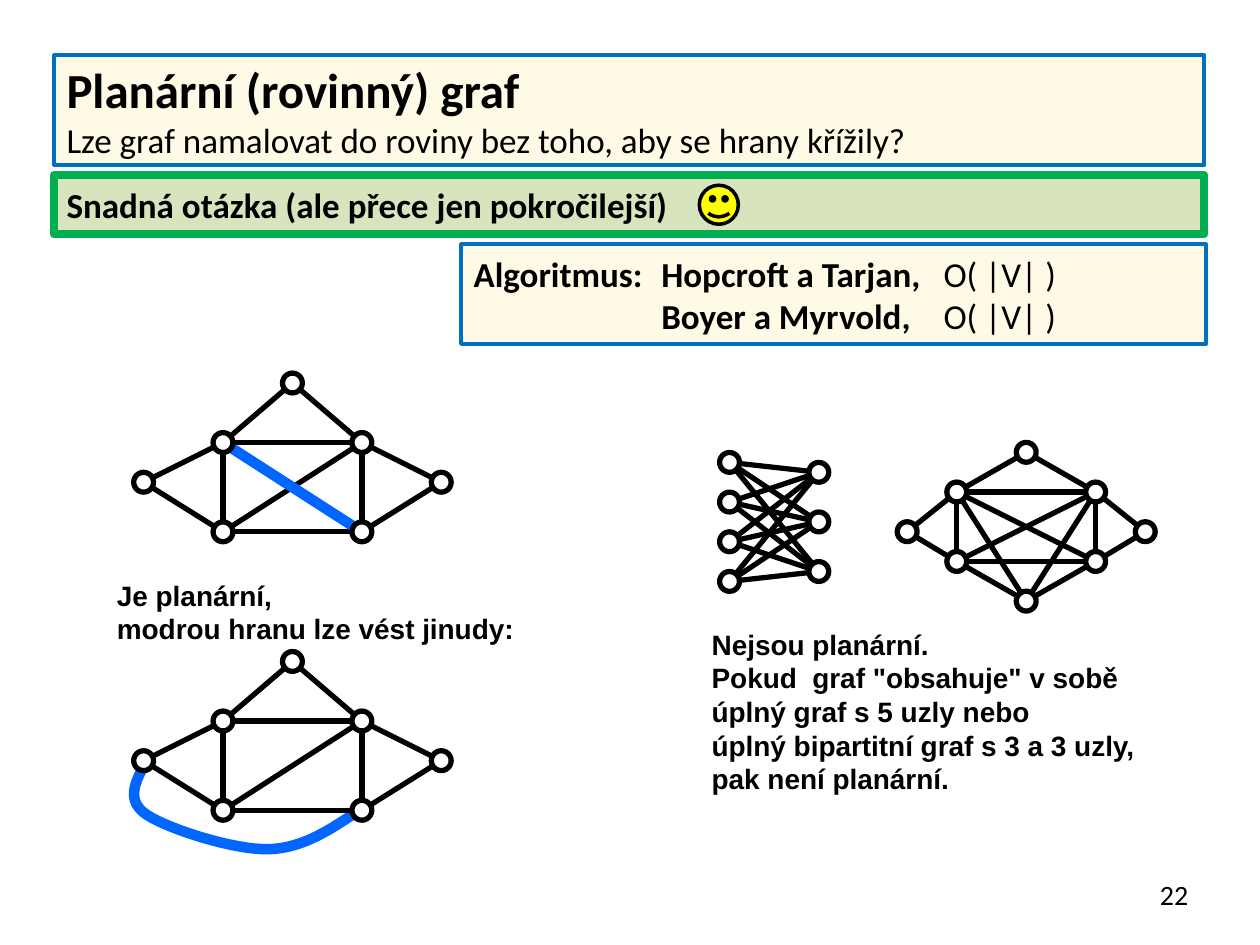
"""Build the slide on planar graphs."""
from itertools import product
from lxml import etree
from pptx import Presentation
from pptx.dml.color import RGBColor
from pptx.enum.shapes import MSO_CONNECTOR, MSO_SHAPE
from pptx.enum.text import MSO_ANCHOR, MSO_AUTO_SIZE, PP_ALIGN
from pptx.oxml.ns import qn
from pptx.util import Inches, Pt

RECT, OVAL, SMILE = MSO_SHAPE.RECTANGLE, MSO_SHAPE.OVAL, MSO_SHAPE.SMILEY_FACE
LINE = MSO_CONNECTOR.STRAIGHT
LEFT, RIGHT = PP_ALIGN.LEFT, PP_ALIGN.RIGHT
TOP, MID = MSO_ANCHOR.TOP, MSO_ANCHOR.MIDDLE
GROW, FIXED = MSO_AUTO_SIZE.SHAPE_TO_FIT_TEXT, MSO_AUTO_SIZE.NONE
BLACK, WHITE, BLUE = "000000", "FFFFFF", "0066FF"
CREAM, EDGE = "FFFAE5", "0070C0"

deck = Presentation()
deck.slide_width, deck.slide_height = Inches(10), Inches(7.5)
slide = deck.slides.add_slide(deck.slide_layouts[6])
shapes = slide.shapes
col, row = deck.slide_width / 10, deck.slide_height / 7.5
unit = col / 12.7


def ink(part, hue):
    part.solid()
    part.fore_color.rgb = RGBColor.from_string(hue)


def write(shape, lines, face="Calibri", align=LEFT, anchor=MID, fit=FIXED, tabs=()):
    frame = shape.text_frame
    frame.word_wrap, frame.vertical_anchor, frame.auto_size = True, anchor, fit
    for num, runs in enumerate(lines):
        para = frame.add_paragraph() if num else frame.paragraphs[0]
        para.alignment = align
        if tabs:
            stops = etree.SubElement(para._p.get_or_add_pPr(), qn("a:tabLst"))
            for stop in tabs:
                etree.SubElement(stops, qn("a:tab"), pos=str(int(stop * col)), algn="l")
        for words, size, bold in runs:
            run = para.add_run()
            run.text = words
            run.font.name, run.font.size, run.font.bold = face, Pt(size), bold
            ink(run.font.fill, BLACK)


graphs = [
    (1.14, 3.04,
     dict(A=(15, 0), B=(8, 6), C=(22, 6), D=(0, 10), E=(30, 10), F=(8, 15), G=(22, 15)),
     "AB AC BD CE BF CG DF EG BC FG CF".split(), ["BG"]),
    (5.79, 3.67,
     dict(A=(0, 0), B=(0, 4), C=(0, 8), D=(0, 12), X=(9, 1), Y=(9, 6), Z=(9, 11)),
     list(product("ABCD", "XYZ")), []),
    (7.2, 3.59,
     dict(A=(12, 0), B=(5, 4), C=(19, 4), D=(0, 8), E=(24, 8),
          F=(5, 11), G=(19, 11), H=(12, 15)),
     "AB AC BC BD CE BF CG DF EG FG CF BG FH GH BH CH".split(), []),
]
left, top, nodes, edges, blue = graphs[0]
graphs.append((left, 5.25, nodes, edges, []))

bends = [
    [(2.87, 6.42), (2.64, 6.57), (2.42, 6.73), (2.14, 6.74)],
    [(2.14, 6.74), (1.86, 6.75), (1.34, 6.58), (1.17, 6.47)],
    [(1.17, 6.47), (1, 6.36), (1.07, 6.22), (1.14, 6.08)],
]
steps = 16
dots = []
for bend in bends:
    for step in range(1, steps + 1):
        t = step / steps
        parts = [(1 - t) ** 3, 3 * t * (1 - t) ** 2, 3 * t * t * (1 - t), t ** 3]
        dots.append([int(col * sum(p * dot[axis] for p, dot in zip(parts, bend)))
                     for axis in (0, 1)])
x, y = bends[0][0]
pen = shapes.build_freeform(int(x * col), int(y * row))
pen.add_line_segments(dots, close=False)
arc = pen.convert_to_shape()
arc.shadow.inherit = False
arc.fill.background()
ink(arc.line.fill, BLUE)
arc.line.width = Pt(6)

panels = [
    (RECT, 0.43, 0.44, 9.13, 0.87, CREAM, EDGE, 2.25,
     [[("Planární (rovinný) graf", 28, True)],
      [("Lze graf namalovat do roviny bez toho, aby se hrany křížily?", 20, False)]]),
    (RECT, 0.43, 1.39, 9.13, 0.47, "D7E4BD", "00B050", 4.5,
     [[("Snadná otázka (ale přece jen pokročilejší)", 20, True)]]),
    (SMILE, 5.55, 1.47, 0.31, 0.31, "FFFF00", BLACK, 2, []),
    (RECT, 3.66, 1.94, 5.91, 0.79, CREAM, EDGE, 2.25,
     [[("Algoritmus:\tHopcroft a Tarjan,\t", 20, True), ("O( |V| )", 20, False)],
      [("\tBoyer a Myrvold,\t", 20, True), ("O( |V| )", 20, False)]]),
]
for kind, x, y, wide, high, fill, rim, thick, lines in panels:
    box = shapes.add_shape(kind, int(x * col), int(y * row), int(wide * col), int(high * row))
    box.shadow.inherit = False
    ink(box.fill, fill)
    ink(box.line.fill, rim)
    box.line.width = Pt(thick)
    if lines:
        write(box, lines, tabs=(1.49, 3.73) if len(lines[0]) > 1 else ())

for left, top, nodes, edges, blue in graphs:
    spots = {name: (int(left * col + x * unit), int(top * row + y * unit))
             for name, (x, y) in nodes.items()}
    for hue, thick, pairs in ((BLACK, 3, edges), (BLUE, 6, blue)):
        for a, b in pairs:
            link = shapes.add_connector(LINE, *spots[a], *spots[b])
            etree.SubElement(link._element.spPr, qn("a:effectLst"))
            ink(link.line.fill, hue)
            link.line.width = Pt(thick)
    for x, y in spots.values():
        ring = shapes.add_shape(OVAL, int(x - unit), int(y - unit), int(2 * unit), int(2 * unit))
        ring.shadow.inherit = False
        ink(ring.fill, WHITE)
        ink(ring.line.fill, BLACK)
        ring.line.width = Pt(3)

notes = [
    (0.83, 4.54, 3.46, 0.64, ["Je planární,", "modrou hranu lze vést jinudy:"]),
    (5.55, 4.93, 3.86, 1.45,
     ["Nejsou planární.", 'Pokud  graf "obsahuje" v sobě', "úplný graf s 5 uzly nebo",
      "úplný bipartitní graf s 3 a 3 uzly,", "pak není planární."]),
]
for x, y, wide, high, lines in notes:
    box = shapes.add_textbox(int(x * col), int(y * row), int(wide * col), int(high * row))
    write(box, [[(line, 16, True)] for line in lines], face="Arial", anchor=TOP, fit=GROW)

page = shapes.add_textbox(int(7.2 * col), int(6.9 * row), int(2.33 * col), int(0.4 * row))
write(page, [[("22", 16, False)]], align=RIGHT)

deck.save("out.pptx")
